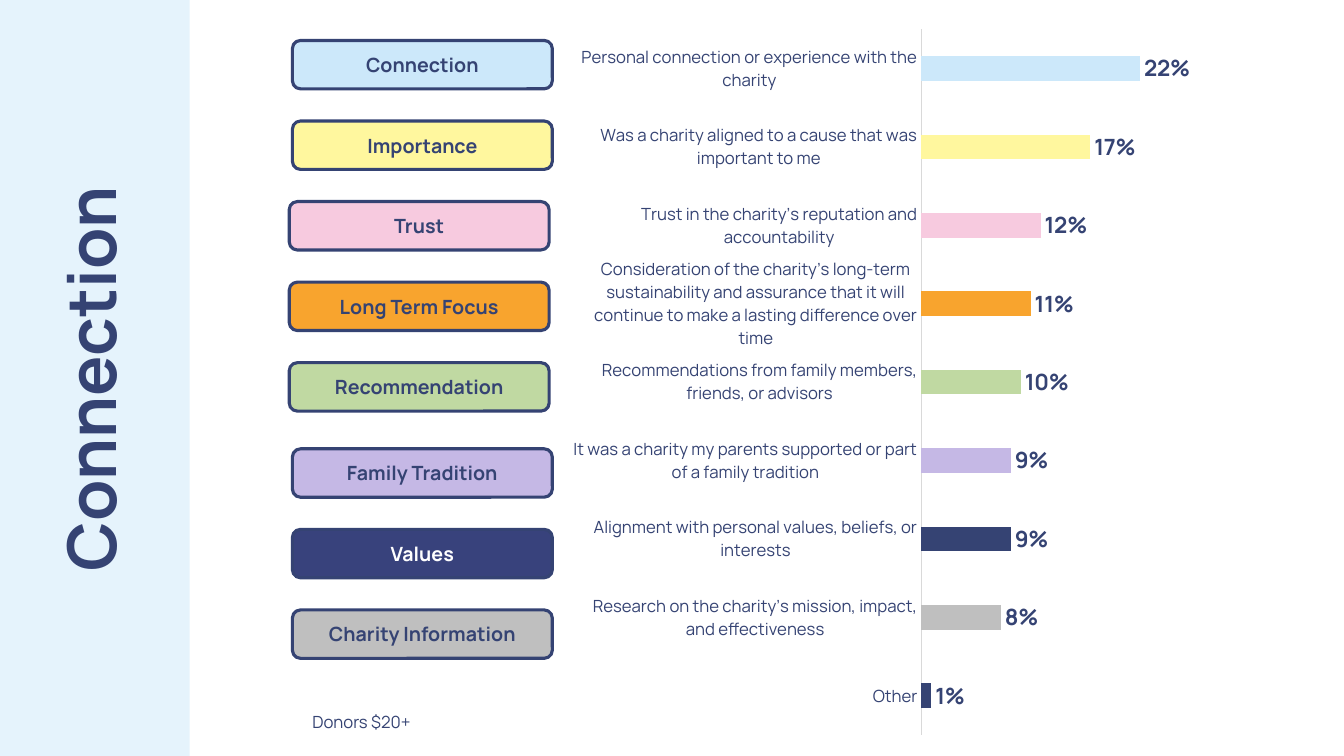
"""Build a slide that charts the reasons donors chose a charity."""
from lxml.etree import SubElement
from pptx import Presentation
from pptx.chart.data import CategoryChartData
from pptx.dml.color import RGBColor
from pptx.enum.chart import XL_CHART_TYPE, XL_LABEL_POSITION, XL_TICK_MARK
from pptx.enum.shapes import MSO_SHAPE
from pptx.enum.text import MSO_ANCHOR, PP_ALIGN
from pptx.oxml import parse_xml
from pptx.oxml.ns import nsdecls, qn
from pptx.util import Cm, Pt

FONT = "Manrope"
NAVY = "354373"
TITLE = "Connection"
BASE_NOTE = "Donors $20+"
OTHER = ("Other", 0.01, NAVY)

# Theme, button fill, button text, bar colour, reason, share
THEMES = [
    ("Connection", "CCE8FA", NAVY, "CCE8FA",
     "Personal connection or experience with the charity", 0.22),
    ("Importance", "FFF79E", NAVY, "FFF79E",
     "Was a charity aligned to a cause that was important to me", 0.17),
    ("Trust", "F7CADF", NAVY, "F7CADF",
     "Trust in the charity's reputation and accountability", 0.12),
    ("Long Term Focus", "F8A42E", NAVY, "F8A42E",
     "Consideration of the charity's long-term sustainability and assurance "
     "that it will continue to make a lasting difference over time", 0.11),
    ("Recommendation", "C0D9A2", NAVY, "C0D9A2",
     "Recommendations from family members, friends, or advisors", 0.10),
    ("Family Tradition", "C5B8E5", NAVY, "C5B8E5",
     "It was a charity my parents supported or part of a family tradition", 0.09),
    ("Values", "38427C", "FFFFFF", NAVY,
     "Alignment with personal values, beliefs, or interests", 0.09),
    ("Charity Information", "BFBFBF", NAVY, "BFBFBF",
     "Research on the charity's mission, impact, and effectiveness", 0.08),
]

BUTTON_LEFT, BUTTON_TOP, BUTTON_STEP = 7.37, 1.02, 2.03
INDENTED_ROWS, INDENT = range(2, 5), -0.08
LOWER_ROWS_START, LOWER_ROWS_DROP = 5, 0.14
PLOT_AREA = {"x": 0.514, "y": 0.027, "w": 0.369, "h": 0.945}


def rgb(code):
    return RGBColor.from_string(code)


def style(font, size, color=NAVY, bold=False):
    font.name = FONT
    font.size = Pt(size)
    font.bold = bold
    font.color.rgb = rgb(color)


def add_band(slide, height):
    band = slide.shapes.add_shape(MSO_SHAPE.RECTANGLE, 0, 0, Cm(4.78), height)
    band.shadow.inherit = False
    band.fill.solid()
    band.fill.fore_color.rgb = rgb("CCE8FA")
    band.line.fill.background()
    tint = band.fill._xPr.find(".//" + qn("a:srgbClr"))
    SubElement(tint, qn("a:alpha"), val="50000")
    slide.shapes._spTree.insert(2, band._element)


def add_title(slide):
    title = slide.shapes.title
    title.left, title.top = Cm(-6.4), Cm(7.7)
    title.width, title.height = Cm(17.6), Cm(3.68)
    title.rotation = 270
    title.text = TITLE
    title.text_frame.vertical_anchor = MSO_ANCHOR.MIDDLE
    heading = title.text_frame.paragraphs[0]
    heading.alignment = PP_ALIGN.CENTER
    heading.line_spacing = 0.9
    style(heading.font, 48, bold=True)


def add_reasons_chart(slide):
    bars = [OTHER] + [(reason, share, color)
                      for *_, color, reason, share in reversed(THEMES)]
    reasons = CategoryChartData(number_format="#,##0%")
    reasons.categories = [reason for reason, _, _ in bars]
    reasons.add_series("Series 1", [share for _, share, _ in bars])
    chart = slide.shapes.add_chart(
        XL_CHART_TYPE.BAR_CLUSTERED, Cm(14.45), Cm(0.23), Cm(17.02), Cm(18.82),
        reasons).chart
    style(chart.font, 10)
    chart.has_title = False
    chart.has_legend = False

    reason_axis = chart.category_axis
    reason_axis.major_tick_mark = XL_TICK_MARK.NONE
    reason_axis.format.line.color.rgb = rgb("D9D9D9")
    reason_axis.format.line.width = Pt(0.75)
    style(reason_axis.tick_labels.font, 12)

    share_axis = chart.value_axis
    share_axis.minimum_scale, share_axis.maximum_scale = 0, 0.25
    share_axis.has_major_gridlines = False
    share_axis.visible = False

    plot = chart.plots[0]
    plot.gap_width = 219
    plot.vary_by_categories = False
    shares = plot.series[0]
    shares.format.fill.solid()
    shares.format.fill.fore_color.rgb = rgb(NAVY)
    for index, (_, _, color) in enumerate(bars):
        fill = shares.points[index].format.fill
        fill.solid()
        fill.fore_color.rgb = rgb(color)

    labels = shares.data_labels
    labels.show_value = True
    labels.position = XL_LABEL_POSITION.OUTSIDE_END
    labels.number_format = "#,##0%"
    labels.number_format_is_linked = False
    style(labels.font, 16, bold=True)
    place_plot(chart)


def place_plot(chart):
    plot_area = chart._chartSpace.find(".//" + qn("c:plotArea"))
    for automatic in plot_area.findall(qn("c:layout")):
        plot_area.remove(automatic)
    sizes = "".join(f'<c:{side} val="{part}"/>' for side, part in PLOT_AREA.items())
    plot_area.insert(0, parse_xml(
        f'<c:layout {nsdecls("c")}><c:manualLayout><c:layoutTarget val="inner"/>'
        '<c:xMode val="edge"/><c:yMode val="edge"/>'
        f'{sizes}</c:manualLayout></c:layout>'))


def add_theme_buttons(slide):
    for row, (theme, fill, text_color, *_) in enumerate(THEMES):
        left = BUTTON_LEFT + (INDENT if row in INDENTED_ROWS else 0)
        drop = LOWER_ROWS_DROP if row >= LOWER_ROWS_START else 0
        top = BUTTON_TOP + row * BUTTON_STEP + drop
        button = slide.shapes.add_shape(
            MSO_SHAPE.ROUNDED_RECTANGLE, Cm(left), Cm(top), Cm(6.55), Cm(1.22))
        button.shadow.inherit = False
        button.fill.solid()
        button.fill.fore_color.rgb = rgb(fill)
        button.line.color.rgb = rgb(NAVY)
        button.line.width = Pt(2.25)
        button.text_frame.text = theme
        button.text_frame.vertical_anchor = MSO_ANCHOR.MIDDLE
        label = button.text_frame.paragraphs[0]
        label.alignment = PP_ALIGN.CENTER
        style(label.font, 14, text_color, bold=True)


def add_base_note(slide):
    note = slide.shapes.add_textbox(Cm(7.62), Cm(17.81), Cm(3.2), Cm(0.76))
    note.text_frame.word_wrap = False
    note.text_frame.text = BASE_NOTE
    style(note.text_frame.paragraphs[0].font, 12)


def main():
    deck = Presentation()
    deck.slide_width, deck.slide_height = Cm(33.87), Cm(19.05)
    slide = deck.slides.add_slide(deck.slide_layouts[5])
    add_band(slide, deck.slide_height)
    add_title(slide)
    add_reasons_chart(slide)
    add_theme_buttons(slide)
    add_base_note(slide)
    deck.save("out.pptx")


if __name__ == "__main__":
    main()
